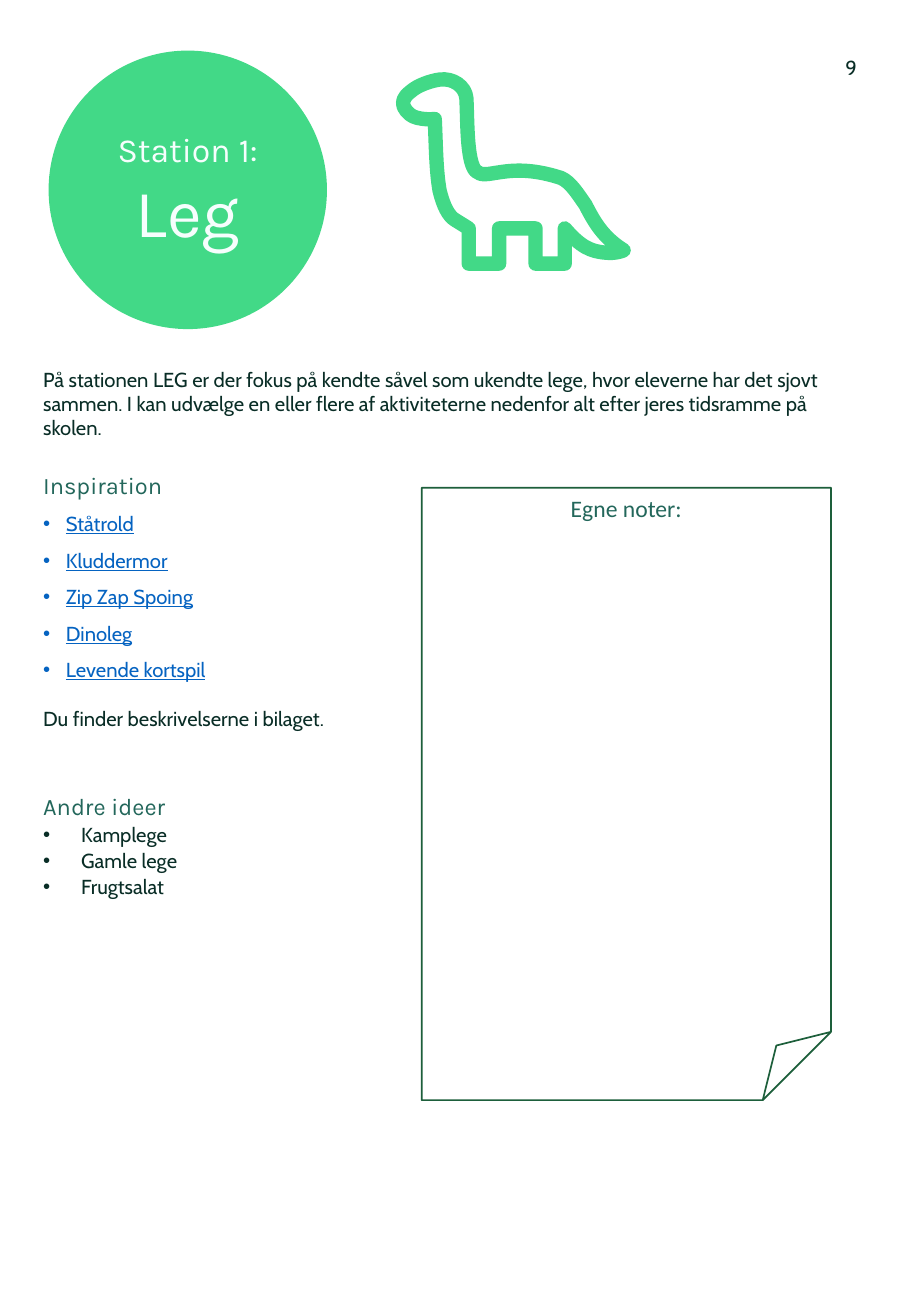
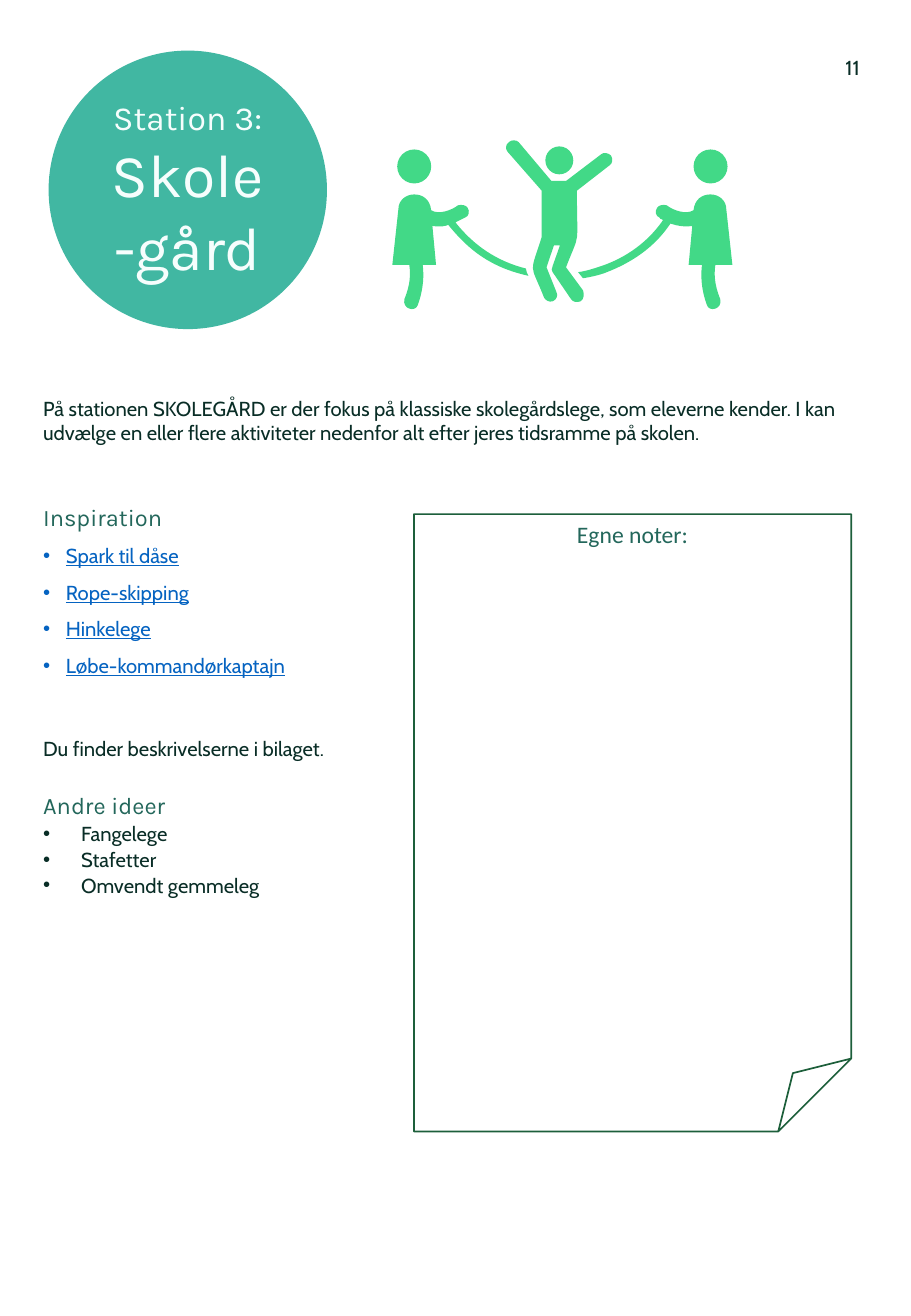
from lxml import etree
from pptx import Presentation
from pptx.dml.color import RGBColor as RGB
from pptx.enum.shapes import MSO_SHAPE as SHAPE
from pptx.enum.text import MSO_ANCHOR as ANCHOR, MSO_AUTO_SIZE as AUTO, PP_ALIGN as ALIGN
from pptx.oxml.ns import qn
from pptx.util import Pt

GREEN, TEAL = RGB(0x42, 0xD9, 0x87), RGB(0x41, 0xB7, 0xA2)
INK, HEADING = RGB(0x09, 0x2D, 0x26), RGB(0x23, 0x67, 0x5B)
LINK, PALE = RGB(0x05, 0x63, 0xC1), RGB(0xF6, 0xFE, 0xFD)
FRAME = RGB(0x1D, 0x5F, 0x3B)

# Content; "gaps" is the space before each block of the text
STATIONS = [
    dict(page="9", label="Station 1: ", name="Leg", name_size=40, color=GREEN, icon="dinosaur",
         intro="På stationen LEG er der fokus på kendte såvel som ukendte lege, hvor eleverne har det "
               "sjovt sammen. I kan udvælge en eller flere af aktiviteterne nedenfor alt efter jeres "
               "tidsramme på skolen.",
         games=["Ståtrold", "Kluddermor", "Zip Zap Spoing", "Dinoleg", "Levende kortspil"],
         ideas=["Kamplege", "Gamle lege", "Frugtsalat"],
         top=214, gaps=dict(games=17.2, hint=14.4, ideas=35.4), notes=(250, 289, 242.6, 362.9)),
    dict(page="11", label="Station 3: ", name="Skole-gård", name_size=36, color=TEAL, icon="rope",
         intro="På stationen SKOLEGÅRD er der fokus på klassiske skolegårdslege, som eleverne kender. "
               "I kan udvælge en eller flere aktiviteter nedenfor alt efter jeres tidsramme på skolen.",
         games=["Spark til dåse", "Rope-skipping", "Hinkelege", "Løbe-kommandørkaptajn"],
         ideas=["Fangelege", "Stafetter", "Omvendt gemmeleg"],
         top=231.1, gaps=dict(games=33.5, hint=34.9, ideas=16.8), notes=(245.4, 304.6, 259.2, 365.8)),
]
HINT = "Du finder beskrivelserne i bilaget."
CIRCLE = (28.8, 30, 165)

# Icon outlines in hundredths of an inch: pairs are corners, sixes are Bézier curves
UNIT = 0.72
DINOSAUR = [
    (462, 146.5), (436, 138, 420, 140.5, 410, 142), (403, 143, 396, 145, 392, 141),
    (384, 134, 385, 97, 384, 80.5), (383, 71, 373, 64, 362, 65.5), (355, 66.5, 344, 70, 338, 75.5),
    (332, 80, 331, 84, 332.5, 88), (335, 93, 339, 96, 343.5, 97), (348, 98, 352, 98.5, 358, 98),
    (359, 120, 359, 140, 362, 157), (365, 169, 369, 178, 375.5, 181.5),
    (386, 188), (386, 217), (411, 217), (411, 188), (441, 188), (441, 217), (465, 217), (465, 188),
    (478, 203, 486, 207, 499, 208), (507, 209, 514, 206, 513.5, 206),
    (496, 195, 489, 182, 482, 168.5), (476, 160, 470, 150, 462, 146.5)]
TURNER_ARM = [
    (589, 218), (603, 218), (598, 172), (598, 165, 592, 160, 585, 160),
    (578, 160, 572, 164, 571, 173), (565, 177, 554, 173, 549, 169), (546, 168, 542, 169, 541, 171),
    (539, 174, 540, 178, 543, 179)]
TURNER_LEG = [
    (558, 186, 564, 187, 570, 186), (567, 218), (578, 218), (577, 226, 577, 237, 582, 251),
    (583, 254, 586, 255, 589, 254), (592, 253, 594, 250, 593, 246), (588, 234, 588, 225, 589, 218)]
RIGHT_ROPE = [
    (543, 180, 544, 180, 546, 181), (531, 203, 510, 214, 495, 219), (489, 221, 483, 223, 476, 224),
    (480, 229), (486, 228, 491, 227, 497, 225), (513, 219, 536, 208, 552, 184)]
LEFT_ROPE = [  # as seen from the right, before mirroring
    (551, 183), (536, 202, 517, 215, 493, 221), (493, 223, 492, 225, 491, 227),
    (522, 220, 540, 206, 557, 185)]
JUMPER = [
    (466, 220), (478, 189, 475, 206, 475, 157), (502, 136), (504, 135, 505, 131, 503, 128),
    (501, 126, 497, 125, 495, 127), (466, 149), (454, 149), (427, 117),
    (425, 115, 421, 115, 419, 117), (416, 119, 416, 123, 418, 125), (446, 157), (446, 195),
    (436, 227, 436, 215, 448, 245), (449, 247, 452, 249, 455, 248), (458, 247, 460, 243, 458, 240),
    (450, 220), (456, 202), (461, 202), (455, 219), (454, 221, 454, 223, 455, 224), (470, 246),
    (472, 249, 475, 249, 478, 248), (481, 246, 481, 242, 480, 239)]
HEADS = [(341, 137, 14), (585, 137, 14), (460.5, 132, 11.5)]
MIRROR = 926  # twice the x of the axis between the two turners


def box(x, y, w, h):
    return Pt(x), Pt(y), Pt(w), Pt(h)


def write(p, text, size=12, color=INK, font="Cabin", underline=None):
    r = p.add_run()
    r.text = text
    r.font.size, r.font.name, r.font.underline = Pt(size), font, underline
    r.font.color.rgb = color


def add_bullet(p, indent):
    pPr = p._p.get_or_add_pPr()
    pPr.set("marL", str(Pt(indent)))
    pPr.set("indent", str(-Pt(indent)))
    etree.SubElement(pPr, qn("a:buFont")).set("typeface", "Arial")
    etree.SubElement(pPr, qn("a:buChar")).set("char", "•")


def paint(sp, fill=None, line=None, width=1):
    sp.shadow.inherit = False
    if fill is None:
        sp.fill.background()
    else:
        sp.fill.solid()
        sp.fill.fore_color.rgb = fill
    if line is None:
        sp.line.fill.background()
    else:
        sp.line.color.rgb, sp.line.width = line, Pt(width)
    return sp


def mirror(outline):
    return [tuple(v if i % 2 else MIRROR - v for i, v in enumerate(part)) for part in outline]


def add_outline(s, outline, **style):
    points = [(Pt(part[i] * UNIT), Pt(part[i + 1] * UNIT))
              for part in outline for i in range(0, len(part), 2)]
    builder = s.shapes.build_freeform(*points[0], scale=1.0)
    builder.add_line_segments(points[1:], close=True)
    sp = paint(builder.convert_to_shape(), **style)
    # Join each three segments of a curve into one Bézier segment
    segments = iter(list(sp.element.iter(qn("a:lnTo"))))
    for part in outline[1:]:
        first = next(segments)
        if len(part) == 6:
            first.tag = qn("a:cubicBezTo")
            for _ in range(2):
                extra = next(segments)
                first.append(extra[0])
                extra.getparent().remove(extra)
    if style.get("line") is not None:
        etree.SubElement(sp.element.spPr.find(qn("a:ln")), qn("a:round"))


def draw_dinosaur(s):
    add_outline(s, DINOSAUR, line=GREEN, width=8.5)


def draw_rope(s):
    right = TURNER_ARM + RIGHT_ROPE + TURNER_LEG
    left = mirror(TURNER_ARM + LEFT_ROPE + TURNER_LEG)
    for figure in (right, left, JUMPER):
        add_outline(s, figure, fill=GREEN)
    for x, y, radius in HEADS:
        frame = [v * UNIT for v in (x - radius, y - radius, 2 * radius, 2 * radius)]
        paint(s.shapes.add_shape(SHAPE.OVAL, *box(*frame)), fill=GREEN)


ICONS = dict(dinosaur=draw_dinosaur, rope=draw_rope)


def add_title(s, station):
    x, y, size = CIRCLE
    circle = paint(s.shapes.add_shape(SHAPE.OVAL, *box(x, y, size, size)), fill=station["color"])
    title = s.shapes.title
    title.element.addprevious(circle.element)
    # The text fills the square inscribed in the circle
    side = size / 2 ** 0.5
    inset = (size - side) / 2
    title.left, title.top, title.width, title.height = box(x + inset, y + inset, side, side)
    tf = title.text_frame
    tf.word_wrap, tf.auto_size, tf.vertical_anchor = True, AUTO.NONE, ANCHOR.MIDDLE
    p = tf.paragraphs[0]
    p.alignment = ALIGN.CENTER
    write(p, station["label"], size=20, color=PALE, font="Karla")
    write(p, station["name"], size=station["name_size"], color=PALE, font="Karla")


def add_body(s, station):
    tf = s.shapes.add_textbox(*box(18.5, station["top"], 503.3, 400)).text_frame
    tf.word_wrap = True
    gaps = station["gaps"]
    heading = dict(size=14, color=HEADING, font="Karla")
    link = dict(color=LINK, underline=True)
    # Text, space before, line spacing, bullet indent, format
    rows = [(station["intro"], 0, 1, 0, {}), ("Inspiration", gaps["games"], 1.07, 0, heading)]
    rows += [(game, 0, 1.5, 13.5, link) for game in station["games"]]
    rows += [(HINT, gaps["hint"], 1, 0, {}), ("Andre ideer", gaps["ideas"], 1.07, 0, heading)]
    rows += [(idea, 0, 1.07, 22.5, {}) for idea in station["ideas"]]
    for i, (text, before, spacing, indent, style) in enumerate(rows):
        p = tf.add_paragraph() if i else tf.paragraphs[0]
        p.line_spacing = float(spacing)
        if before:
            p.space_before = Pt(before)
        if indent:
            add_bullet(p, indent)
        write(p, text, **style)


def add_notes_sheet(s, frame):
    sp = paint(s.shapes.add_shape(SHAPE.FOLDED_CORNER, *box(*frame)), line=FRAME)
    tf = sp.text_frame
    tf.word_wrap, tf.vertical_anchor = True, ANCHOR.TOP
    p = tf.paragraphs[0]
    p.alignment = ALIGN.CENTER
    write(p, "Egne noter:", size=14, color=HEADING, font="Calibri")


def main():
    prs = Presentation()
    prs.slide_width, prs.slide_height = Pt(540), Pt(779.76)
    for station in STATIONS:
        s = prs.slides.add_slide(prs.slide_layouts[5])
        add_title(s, station)
        add_body(s, station)
        ICONS[station["icon"]](s)
        add_notes_sheet(s, station["notes"])
        tf = s.shapes.add_textbox(*box(494, 29.2, 30.2, 21.6)).text_frame
        tf.word_wrap = True
        write(tf.paragraphs[0], station["page"])
    prs.save("out.pptx")


if __name__ == "__main__":
    main()
